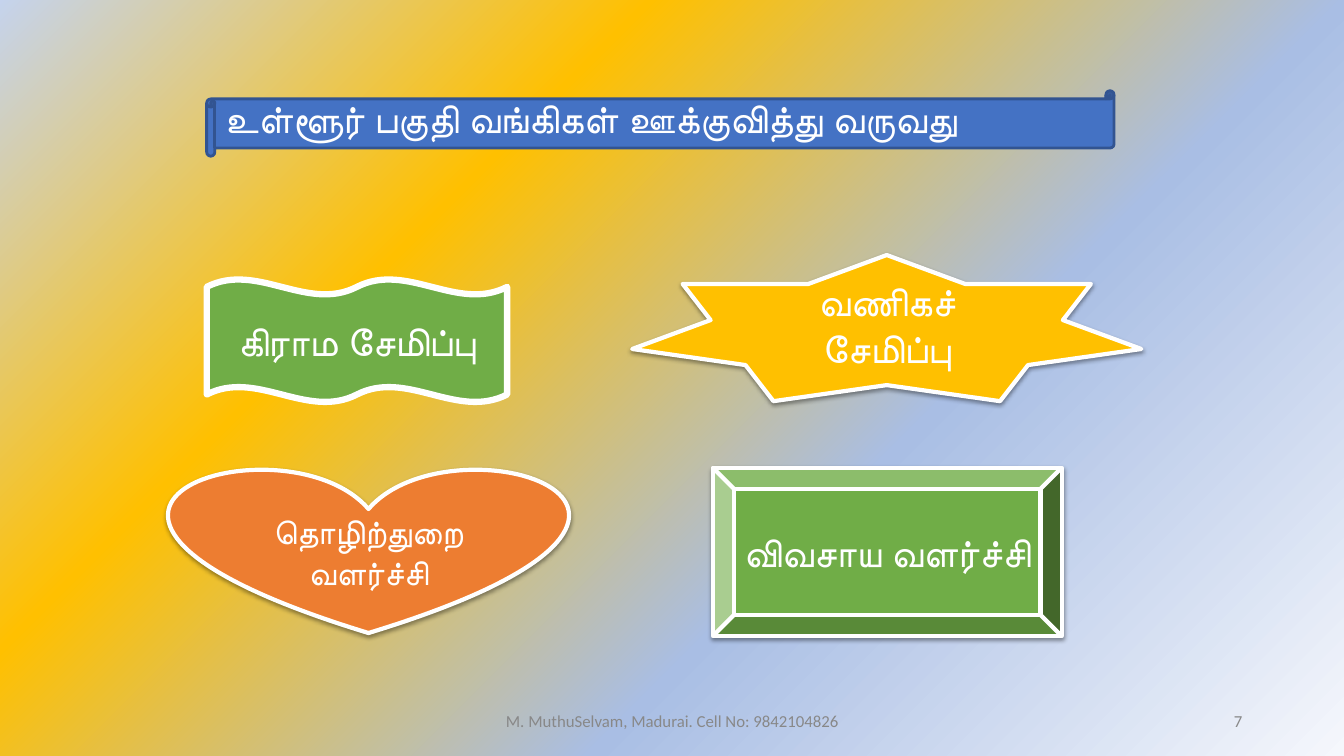
"""Build a slide on what local banks encourage."""
from lxml import etree
from pptx import Presentation
from pptx import util as u
from pptx.dml.color import RGBColor
from pptx.enum import shapes, text
from pptx.oxml import parse_xml
from pptx.oxml.ns import nsdecls, qn

WHITE = RGBColor(0xFF, 0xFF, 0xFF)
GREY = RGBColor(0x88, 0x88, 0x88)
BLUE = RGBColor(0x44, 0x72, 0xC4)
NAVY = RGBColor(0x32, 0x54, 0x91)
GREEN = RGBColor(0x70, 0xAD, 0x47)
ORANGE = RGBColor(0xED, 0x7D, 0x31)
GOLD = RGBColor(0xFF, 0xC0, 0x00)
MIST = RGBColor(0xF5, 0xF7, 0xFC)
SKY = RGBColor(0xA9, 0xBE, 0xE4)
PALE = RGBColor(0xC5, 0xD3, 0xED)
KIND = shapes.MSO_SHAPE
ALIGN = text.PP_ALIGN


def write(box, words, size, color, align):
    frame = box.text_frame
    frame.word_wrap = True
    frame.vertical_anchor = text.MSO_ANCHOR.MIDDLE
    para = frame.paragraphs[0]
    para.alignment = align
    span = para.add_run()
    span.text = words
    span.font.name = "Calibri"
    span.font.size = u.Pt(size)
    span.font.color.rgb = color


def add_shadow(shape):
    effects = shape._element.spPr.find(qn("a:effectLst"))
    shadow = etree.SubElement(effects, qn("a:outerShdw"), blurRad="40000",
                              dist="20000", dir="5400000", rotWithShape="0")
    black = etree.SubElement(shadow, qn("a:srgbClr"), val="000000")
    etree.SubElement(black, qn("a:alpha"), val="38000")


deck = Presentation()
deck.slide_width = u.Inches(13.33)
deck.slide_height = u.Inches(7.5)
page = deck.slides.add_slide(deck.slide_layouts[6])

stops = "".join(
    f'<a:gs pos="{share * 1000}"><a:srgbClr val="{color}"/></a:gs>'
    for share, color in [(0, MIST), (36, SKY), (69, GOLD), (100, PALE)])
page.background.fill.solid()
backdrop = page.background._cSld.bg.bgPr
backdrop.replace(backdrop[0], parse_xml(
    f'<a:gradFill rotWithShape="1" {nsdecls("a")}><a:gsLst>{stops}</a:gsLst>'
    '<a:path path="circle"><a:fillToRect l="100000" t="100000"/></a:path>'
    '<a:tileRect r="-100000" b="-100000"/></a:gradFill>'))

figures = [
    (KIND.HEART, (1.68, 4.64, 3.95, 1.64), ORANGE, WHITE, 3, True,
     "தொழிற்துறை வளர்ச்சி", 24, ALIGN.CENTER),
    (KIND.STAR_7_POINT, (6.27, 2.53, 5.05, 1.45), GOLD, WHITE, 3, True,
     "வணிகச் சேமிப்பு", 28, ALIGN.CENTER),
    (KIND.BEVEL, (7.07, 4.64, 3.46, 1.67), GREEN, WHITE, 3, True,
     "விவசாய வளர்ச்சி", 28, ALIGN.CENTER),
    (KIND.DOUBLE_WAVE, (2.05, 2.77, 2.98, 1.22), GREEN, WHITE, 4.5, False,
     "கிராம சேமிப்பு", 28, ALIGN.CENTER),
    (KIND.HORIZONTAL_SCROLL, (2.05, 0.9, 9, 0.65), BLUE, NAVY, 2, False,
     "உள்ளூர் பகுதி வங்கிகள் ஊக்குவித்து வருவது", 28, ALIGN.LEFT),
]
for kind, place, fill, edge, width, shaded, words, size, align in figures:
    shape = page.shapes.add_shape(kind, *map(u.Inches, place))
    shape.shadow.inherit = False
    shape.fill.solid()
    shape.fill.fore_color.rgb = fill
    shape.line.color.rgb = edge
    shape.line.width = u.Pt(width)
    if shaded:
        add_shadow(shape)
    if kind == KIND.HEART:
        shape.text_frame.margin_top = u.Inches(0.21)
    if kind == KIND.HORIZONTAL_SCROLL:
        shape.text_frame.margin_bottom = u.Inches(0.17)
    write(shape, words, size, WHITE, align)

for left, width, words, align in [
        (4.42, 4.5, "M. MuthuSelvam, Madurai. Cell No: 9842104826", ALIGN.CENTER),
        (9.42, 3, "7", ALIGN.RIGHT)]:
    box = page.shapes.add_textbox(*map(u.Inches, (left, 6.95, width, 0.4)))
    write(box, words, 12, GREY, align)

deck.save("out.pptx")
